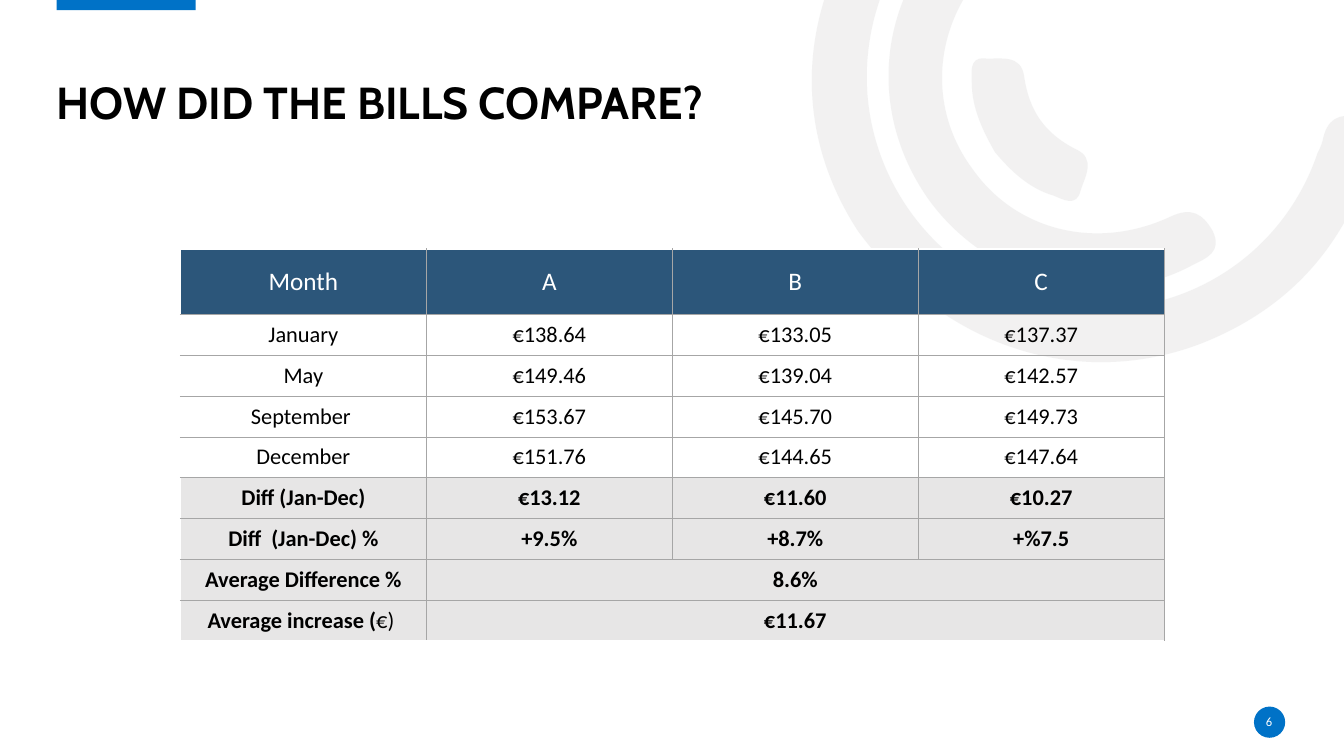
from math import cos, radians, sin

from lxml import etree
from pptx import Presentation
from pptx.dml.color import RGBColor
from pptx.enum.shapes import MSO_SHAPE
from pptx.enum.text import MSO_ANCHOR, MSO_AUTO_SIZE, PP_ALIGN
from pptx.oxml.ns import qn
from pptx.util import Pt

CENTER, LEFT = PP_ALIGN.CENTER, PP_ALIGN.LEFT
MIDDLE, BOTTOM = MSO_ANCHOR.MIDDLE, MSO_ANCHOR.BOTTOM
RECTANGLE, OVAL = MSO_SHAPE.RECTANGLE, MSO_SHAPE.OVAL

BLACK = RGBColor(0x00, 0x00, 0x00)
WHITE = RGBColor(0xFF, 0xFF, 0xFF)
BLUE = RGBColor(0x00, 0x72, 0xC7)
NAVY = RGBColor(0x2C, 0x56, 0x7A)
PALE_GRAY = RGBColor(0xE7, 0xE6, 0xE6)
LINE_GRAY = RGBColor(0xA6, 0xA6, 0xA6)

EMU_PER_PX = 9144  # 100 px to the inch
ARC_ROTATION = 144.2
ARC_ALPHA = 53000

# Each arc: box (left, top, width, height), then a start point
# and three points for every Bezier curve, as seen on the slide
OUTER_ARC = (813, -202, 485, 600), [
    (851, 229), (799, 149), (787, 50), (838, -50), (890, -152), (976, -203), (1090, -207),
    (1105, -207), (1121, -210), (1131, -195), (1144, -175), (1127, -154), (1098, -154),
    (967, -154), (865, -59), (860, 68), (856, 181), (936, 281), (1046, 302),
    (1160, 324), (1270, 261), (1307, 152), (1309, 148), (1311, 144), (1312, 140),
    (1316, 119), (1327, 111), (1349, 117), (1373, 124), (1367, 141), (1361, 156),
    (1334, 245), (1278, 307), (1191, 341), (1070, 387), (936, 345), (851, 229),
]
MIDDLE_ARC = (901, -78, 213, 426), [
    (922, 199), (862, 115), (869, 7), (940, -68), (951, -79), (962, -95), (980, -78),
    (995, -64), (997, -50), (979, -32), (925, 26), (920, 108), (965, 168),
    (1008, 229), (1088, 249), (1161, 215), (1182, 205), (1193, 212), (1203, 229),
    (1213, 250), (1197, 256), (1183, 263), (1096, 310), (983, 282), (922, 199),
]
INNER_ARC = (980, 37, 78, 183), [
    (987, 151), (975, 130), (964, 107), (964, 82), (964, 73), (961, 57), (976, 58),
    (992, 59), (1013, 53), (1016, 76), (1021, 110), (1036, 132), (1067, 148),
    (1088, 157), (1076, 176), (1072, 189), (1068, 206), (1055, 198), (1045, 194),
    (1021, 187), (1003, 170), (987, 151),
]

HEADER = ["Month", "A", "B", "C"]
MONTH_ROWS = [
    ["January", "€138.64", "€133.05", "€137.37"],
    ["May", "€149.46", "€139.04", "€142.57"],
    ["September ", "€153.67", "€145.70", "€149.73"],
    ["December", "€151.76", "€144.65", "€147.64"],
]
SUMMARY_ROWS = [
    ["Diff (Jan-Dec)", "€13.12", "€11.60", "€10.27"],
    ["Diff  (Jan-Dec) %", "+9.5%", "+8.7%", "+%7.5"],
    ["Average Difference %", "8.6%"],
    ["Average increase (", "€11.67"],
]
EURO_SUFFIX = "€) "  # the last label ends in regular weight


def px(value):
    return round(value * EMU_PER_PX)


def add_run(paragraph, text, font_name, size, color, bold=False):
    run = paragraph.add_run()
    run.text = text
    run.font.name = font_name
    run.font.size = Pt(size)
    run.font.bold = bold
    run.font.color.rgb = color


def paint(shape, color):
    shape.shadow.inherit = False
    shape.fill.solid()
    shape.fill.fore_color.rgb = color
    shape.line.fill.background()


def clear_insets(frame):
    frame.margin_left = frame.margin_right = frame.margin_top = frame.margin_bottom = 0
    frame.word_wrap = True


def to_arc_frame(point, width, height, center):
    """Turn a slide point back into the arc's own unrotated box."""
    angle = radians(ARC_ROTATION)
    dx, dy = point[0] - center[0], point[1] - center[1]
    return (px(dx * cos(angle) + dy * sin(angle) + width / 2),
            px(dy * cos(angle) - dx * sin(angle) + height / 2))


def add_arc(slide, box, points):
    left, top, width, height = box
    center = (left + width / 2, top + height / 2)
    local = [to_arc_frame(point, width, height, center) for point in points]
    builder = slide.shapes.build_freeform(*local[0])
    builder.add_line_segments(local[3::3], close=True)
    arc = builder.convert_to_shape()
    arc.left, arc.top, arc.width, arc.height = (px(value) for value in box)
    arc.rotation = ARC_ROTATION
    paint(arc, PALE_GRAY)
    color = arc._element.spPr.find(qn("a:solidFill"))[0]
    etree.SubElement(color, qn("a:alpha"), val=str(ARC_ALPHA))

    # Bend the segments into Bezier curves
    outline = next(arc._element.iter(qn("a:path")))
    outline.set("w", str(px(width)))
    outline.set("h", str(px(height)))
    start = outline.find(qn("a:moveTo"))[0]
    start.set("x", str(local[0][0]))
    start.set("y", str(local[0][1]))
    for index, segment in enumerate(outline.findall(qn("a:lnTo"))):
        curve = etree.Element(qn("a:cubicBezTo"))
        for x, y in local[3 * index + 1:3 * index + 4]:
            etree.SubElement(curve, qn("a:pt"), x=str(x), y=str(y))
        outline.replace(segment, curve)


def add_block(slide, kind, left, top, width, height, rotation=0):
    block = slide.shapes.add_shape(kind, px(left), px(top), px(width), px(height))
    block.rotation = rotation
    paint(block, BLUE)


def set_title(slide, text):
    title = slide.shapes.title
    title.left, title.top, title.width, title.height = px(56), px(27), px(1219), px(101)
    frame = title.text_frame
    clear_insets(frame)
    frame.auto_size = MSO_AUTO_SIZE.NONE
    frame.vertical_anchor = BOTTOM
    paragraph = frame.paragraphs[0]
    paragraph.alignment = LEFT
    paragraph.line_spacing = 0.9
    add_run(paragraph, text, "Cabin", 32, BLACK, bold=True)
    slide.shapes._spTree.append(title._element)  # bring above the arcs


def add_page_number(slide, number):
    box = slide.shapes.add_textbox(px(1243), px(706), px(32), px(20))
    clear_insets(box.text_frame)
    box.text_frame.vertical_anchor = MIDDLE
    paragraph = box.text_frame.paragraphs[0]
    paragraph.alignment = CENTER
    add_run(paragraph, number, "Calibri", 9, WHITE)


def set_borders(cell, white_sides):
    properties = cell._tc.get_or_add_tcPr()
    for side in "LRTB":
        white = side in white_sides
        line = etree.SubElement(properties, qn(f"a:ln{side}"), w=str(Pt(1 if white else 0.5)))
        fill = etree.SubElement(line, qn("a:solidFill"))
        etree.SubElement(fill, qn("a:srgbClr"), val=str(WHITE if white else LINE_GRAY))


def add_bill_table(slide):
    rows = [HEADER] + MONTH_ROWS + SUMMARY_ROWS
    last_row, first_summary = len(rows) - 1, 1 + len(MONTH_ROWS)
    width, height, header_height = 976, 389, 65
    table = slide.shapes.add_table(
        len(rows), len(HEADER), px(179), px(247), px(width), px(height)).table
    table.first_row = table.horz_banding = False
    for column in table.columns:
        column.width = px(width / len(HEADER))
    for index, row in enumerate(table.rows):
        row.height = px(header_height if index == 0 else (height - header_height) / last_row)

    for r, values in enumerate(rows):
        summary = r >= first_summary
        for c in range(len(HEADER)):
            cell = table.cell(r, c)
            set_borders(cell, "L" * (c == 0) + "T" * (r == 0) + "B" * (r == last_row))
            if r == 0 or summary:
                cell.fill.solid()
                cell.fill.fore_color.rgb = PALE_GRAY if summary else NAVY
            else:
                cell.fill.background()
            if c >= len(values):
                continue
            cell.vertical_anchor = MIDDLE
            paragraph = cell.text_frame.paragraphs[0]
            paragraph.alignment = CENTER
            size, color = (18, WHITE) if r == 0 else (16, BLACK)
            add_run(paragraph, values[c], "Calibri", size, color, bold=summary)
            if (r, c) == (last_row, 0):
                add_run(paragraph, EURO_SUFFIX, "Calibri", size, color)
        if len(values) < len(HEADER):
            table.cell(r, 1).merge(table.cell(r, len(HEADER) - 1))


def main():
    presentation = Presentation()
    presentation.slide_width, presentation.slide_height = px(1333.33), px(750)
    slide = presentation.slides.add_slide(presentation.slide_layouts[5])
    # Background decoration
    for box, points in (OUTER_ARC, MIDDLE_ARC, INNER_ARC):
        add_arc(slide, box, points)
    add_block(slide, RECTANGLE, 56, -2, 138, 12, rotation=180)
    add_block(slide, OVAL, 1244, 701, 31, 31)
    # Content
    set_title(slide, "HOW DID THE BILLS COMPARE?")
    add_bill_table(slide)
    add_page_number(slide, "6")
    presentation.save("out.pptx")


if __name__ == "__main__":
    main()
